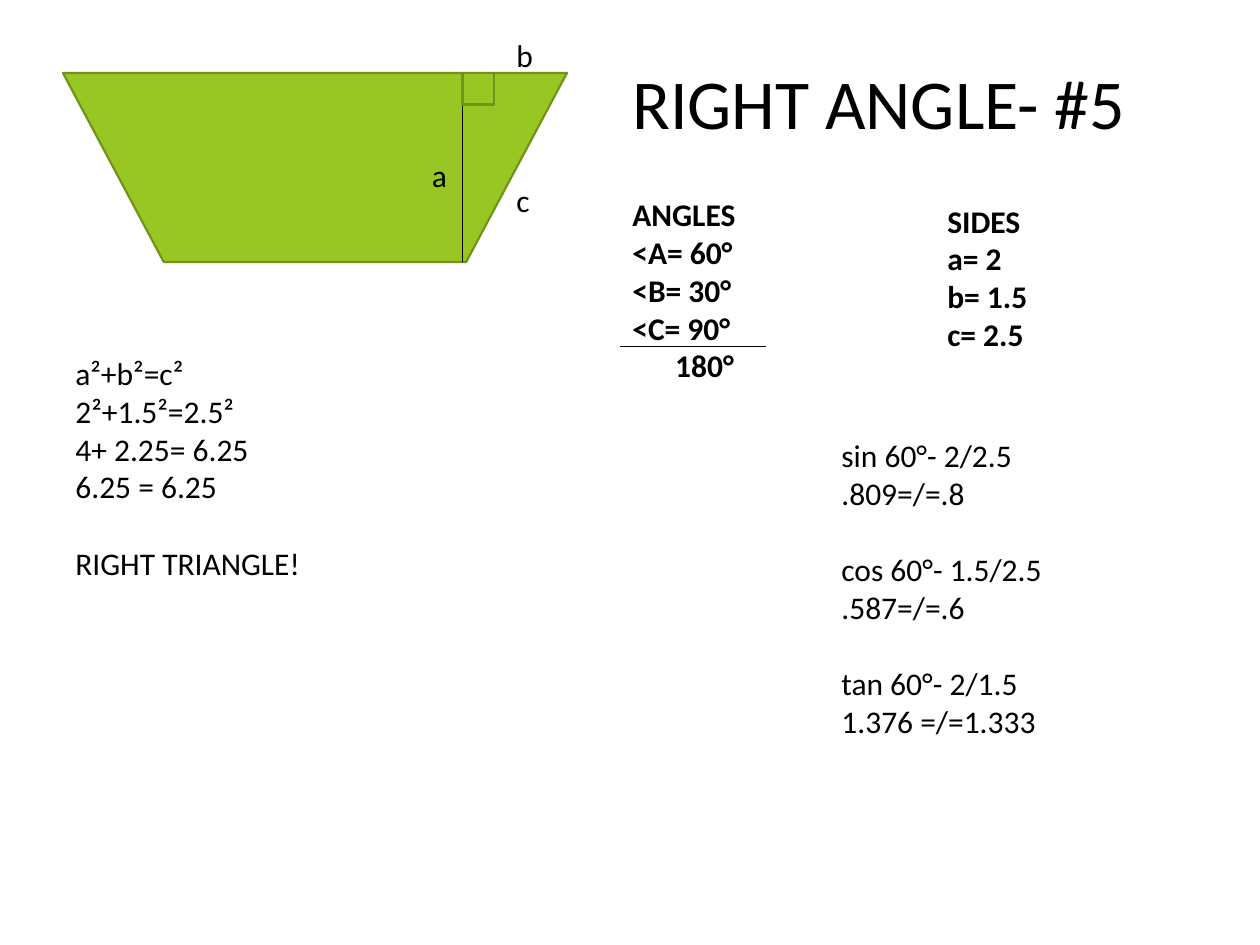
from lxml import etree
from pptx import Presentation
from pptx.dml.color import RGBColor
from pptx.enum.shapes import MSO_CONNECTOR, MSO_SHAPE
from pptx.enum.text import MSO_AUTO_SIZE
from pptx.oxml.ns import qn
from pptx.util import Inches, Pt

FONT = "Calibri"
BLACK, GREEN, DARK_GREEN = "000000", "98C723", "70931A"
BODY_SIZE = 18
BLANK_LINE = 22  # points, the height of one body line


def color(hex_value):
    return RGBColor.from_string(hex_value)


def add_text(slide, box, lines, size=BODY_SIZE, bold=False, gaps=(), indents=None):
    """Write one paragraph per line; gaps lists the lines preceded by a blank line's space."""
    frame = slide.shapes.add_textbox(*map(Inches, box)).text_frame
    frame.word_wrap = True
    frame.auto_size = MSO_AUTO_SIZE.SHAPE_TO_FIT_TEXT
    for index, line in enumerate(lines):
        paragraph = frame.paragraphs[0] if index == 0 else frame.add_paragraph()
        if index in gaps:
            paragraph.space_before = Pt(BLANK_LINE)
        if indents and index in indents:
            paragraph._p.get_or_add_pPr().set("marL", str(Inches(indents[index])))
        run = paragraph.add_run()
        run.text = line
        run.font.name = FONT
        run.font.size = Pt(size)
        run.font.bold = bold
        run.font.color.rgb = color(BLACK)


def add_green_shape(slide, kind, box):
    shape = slide.shapes.add_shape(kind, *map(Inches, box))
    shape.shadow.inherit = False
    shape.fill.solid()
    shape.fill.fore_color.rgb = color(GREEN)
    shape.line.color.rgb = color(DARK_GREEN)
    shape.line.width = Pt(1.25)


def add_line(slide, *ends):
    line = slide.shapes.add_connector(MSO_CONNECTOR.STRAIGHT, *map(Inches, ends))
    line.line.color.rgb = color(BLACK)
    line.line.width = Pt(0.75)
    etree.SubElement(line._element.spPr, qn("a:effectLst"))


def add_trapezoid(slide, left, top, width, height):
    # Trapezoid with its height and the right-angle mark
    height_x = left + 3.17
    add_green_shape(slide, MSO_SHAPE.FLOWCHART_MANUAL_OPERATION, (left, top, width, height))
    add_line(slide, height_x, top, height_x, top + height)
    add_green_shape(slide, MSO_SHAPE.RECTANGLE, (height_x, top, 0.25, 0.25))
    # Side labels
    for side, dx, dy, label_width in (("a", 2.83, 0.61, 0.46),
                                      ("b", 3.5, -0.34, 0.5),
                                      ("c", 3.5, 0.81, 0.5)):
        add_text(slide, (left + dx, top + dy, label_width, 0.4), [side])


def add_angles(slide, left, top, width, height):
    # Angle list with a sum line above the total
    add_text(slide, (left, top, width, height),
             ["ANGLES", "<A= 60°", "<B= 30°", "<C= 90°", "180°"],
             bold=True, indents={4: 0.34})
    add_line(slide, left, top + 1.25, left + 1.16, top + 1.25)


def add_sides(slide, *box):
    add_text(slide, box, ["SIDES", "a= 2", "b= 1.5", "c= 2.5"], bold=True)


def add_ratios(slide, *box):
    add_text(slide, box,
             ["sin 60°- 2/2.5", ".809=/=.8",
              "cos 60°- 1.5/2.5", ".587=/=.6",
              "tan 60°- 2/1.5", "1.376 =/=1.333"], gaps=(2, 4))


def add_pythagoras(slide, *box):
    add_text(slide, box,
             ["a²+b²=c²", "2²+1.5²=2.5²", "4+ 2.25= 6.25", "6.25 = 6.25",
              "RIGHT TRIANGLE!"], gaps=(4,))


def main():
    deck = Presentation()
    deck.slide_width, deck.slide_height = Inches(10), Inches(7.5)
    slide = deck.slides.add_slide(deck.slide_layouts[6])

    add_trapezoid(slide, 0.5, 0.58, 4, 1.5)
    add_text(slide, (4.92, 0.42, 4.17, 0.77), ["RIGHT ANGLE- #5"], size=40)
    add_angles(slide, 4.92, 1.5, 1.42, 1.92)
    add_sides(slide, 7.42, 1.55, 1.33, 1.31)
    add_ratios(slide, 6.58, 3.41, 5, 2.52)
    add_pythagoras(slide, 0.5, 2.76, 5, 1.92)

    deck.save("out.pptx")


if __name__ == "__main__":
    main()
